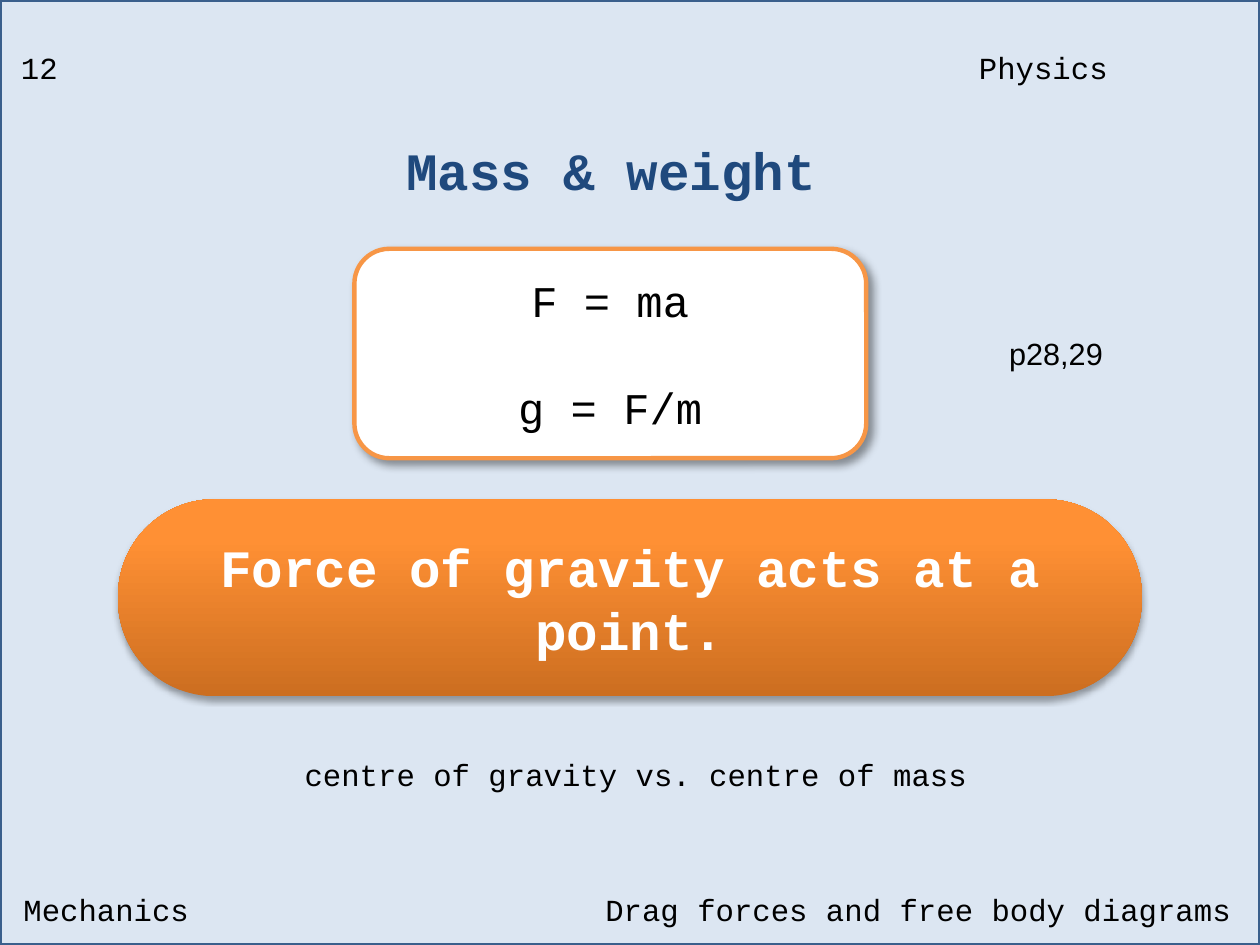
from copy import deepcopy
from dataclasses import dataclass

from pptx import Presentation
from pptx.dml.color import RGBColor
from pptx.enum.shapes import MSO_SHAPE as Shape
from pptx.enum.text import MSO_ANCHOR as Anchor, PP_ALIGN as Align
from pptx.oxml import parse_xml
from pptx.oxml.ns import nsdecls, qn
from pptx.util import Inches, Pt


@dataclass(frozen=True)
class Theme:
    mono: str = "Courier New"
    sans: str = "Arial"
    page: str = "DCE6F2"
    border: str = "3A5F8C"
    ink: str = "000000"
    white: str = "FFFFFF"
    heading: str = "1F497D"
    accent: str = "F79646"
    gradient: tuple = ((0, "CC6E20"), (0.8, "FF9034"), (1, "FF9136"))
    label_size: int = 14
    formula_size: int = 20
    heading_size: int = 24


theme = Theme()


def write(frame, *lines, size=theme.label_size, font=theme.mono,
          color=theme.ink, bold=False, align=Align.CENTER, gap=0):
    frame.word_wrap = True
    for index, line in enumerate(lines):
        paragraph = frame.add_paragraph() if index else frame.paragraphs[0]
        paragraph.alignment = align
        if index:
            paragraph.space_before = Pt(gap)
        run = paragraph.add_run()
        run.text = line
        run.font.name = font
        run.font.size = Pt(size)
        run.font.bold = bold
        run.font.color.rgb = RGBColor.from_string(color)


def add_panel(kind, left, top, width, height, fill=None, line=None, shadow=None):
    panel = slide.shapes.add_shape(
        kind, Inches(left), Inches(top), Inches(width), Inches(height))
    panel.shadow.inherit = False
    if fill:
        panel.fill.solid()
        panel.fill.fore_color.rgb = RGBColor.from_string(fill)
    if line:
        panel.line.color.rgb = RGBColor.from_string(line)
        panel.line.width = Pt(2)
    else:
        panel.line.fill.background()
    if shadow:
        blur, distance, angle, opacity = shadow
        panel.element.spPr.find(qn("a:effectLst")).append(parse_xml(
            f'<a:outerShdw {nsdecls("a")} blurRad="{Pt(blur)}" dist="{Pt(distance)}" '
            f'dir="{angle * 60000}" rotWithShape="0"><a:srgbClr val="{theme.ink}">'
            f'<a:alpha val="{opacity * 1000}"/></a:srgbClr></a:outerShdw>'))
    panel.text_frame.vertical_anchor = Anchor.MIDDLE
    return panel


deck = Presentation()
deck.slide_width, deck.slide_height = Inches(8), Inches(6)
slide = deck.slides.add_slide(deck.slide_layouts[6])

add_panel(Shape.RECTANGLE, 0, 0, 8, 6, fill=theme.page, line=theme.border)

statement = add_panel(Shape.ROUNDED_RECTANGLE, 0.75, 3.17, 6.5, 1.25,
                      shadow=(3.1, 1.8, 90, 35))
statement.adjustments[0] = 0.49
statement.fill.gradient()
statement.fill.gradient_angle = 90
stop_list = statement.element.spPr.find(qn("a:gradFill")).find(qn("a:gsLst"))
stop_list.append(deepcopy(stop_list[-1]))
for stop, (position, color) in zip(statement.fill.gradient_stops, theme.gradient):
    stop.position = position
    stop.color.rgb = RGBColor.from_string(color)
write(statement.text_frame, "Force of gravity acts at a point.",
      size=theme.heading_size, color=theme.white, bold=True)

formulas = add_panel(Shape.ROUNDED_RECTANGLE, 2.25, 1.58, 3.25, 1.33,
                     fill=theme.white, line=theme.accent, shadow=(4, 3, 45, 40))
write(formulas.text_frame, "F = ma", "g = F/m", size=theme.formula_size, gap=25)

labels = [
    ("Mechanics", 0.05, 5.61, 2.25, {"align": Align.LEFT}),
    ("Physics", 5.5, 0.26, 2.25, {}),
    ("12", 0, 0.26, 0.5, {}),
    ("Drag forces and free body diagrams", 3.5, 5.61, 4.42, {"align": Align.RIGHT}),
    ("Mass & weight", 1.67, 0.83, 4.42,
     {"size": theme.heading_size, "color": theme.heading, "bold": True}),
    ("p28,29", 5.58, 2.08, 2.25, {"font": theme.sans}),
    ("centre of gravity vs. centre of mass", 1.5, 4.75, 5.08, {}),
]
for text, left, top, width, style in labels:
    height = 0.5 if "size" in style else 0.34
    label = slide.shapes.add_textbox(
        Inches(left), Inches(top), Inches(width), Inches(height))
    write(label.text_frame, text, **style)

deck.save("out.pptx")
